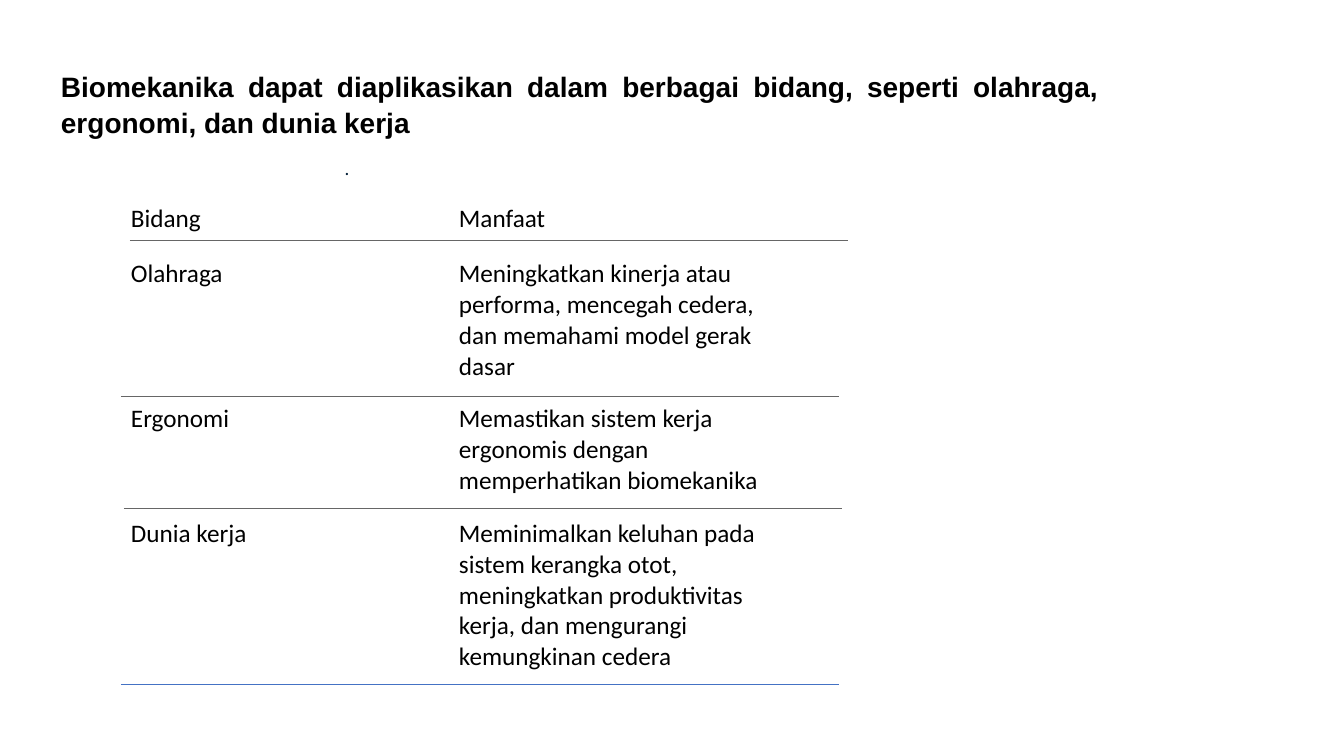
from lxml import etree
from pptx import Presentation
from pptx.dml.color import RGBColor
from pptx.enum.shapes import MSO_CONNECTOR, MSO_SHAPE
from pptx.enum.text import MSO_ANCHOR, PP_ALIGN
from pptx.oxml.ns import qn
from pptx.util import Emu, Pt

LEFT, JUSTIFY = PP_ALIGN.LEFT, PP_ALIGN.JUSTIFY
TOP = MSO_ANCHOR.TOP
RECT = MSO_SHAPE.RECTANGLE
STRAIGHT = MSO_CONNECTOR.STRAIGHT

BLACK = RGBColor(0x00, 0x00, 0x00)
WHITE = RGBColor(0xFF, 0xFF, 0xFF)
NAVY = RGBColor(0x00, 0x1D, 0x35)
GREY = RGBColor(0x66, 0x66, 0x66)
BLUE = RGBColor(0x44, 0x72, 0xC4)

SCALE = 9071
RULE_WIDTH = 718

TITLE = ("Biomekanika dapat diaplikasikan dalam berbagai bidang, "
         "seperti olahraga, ergonomi, dan dunia kerja")
ROWS = [
    (48, "Bidang", "Manfaat"),
    (144, "Olahraga", "Meningkatkan kinerja atau performa, mencegah cedera, "
                      "dan memahami model gerak dasar"),
    (114, "Ergonomi", "Memastikan sistem kerja ergonomis dengan "
                      "memperhatikan biomekanika"),
    (174, "Dunia kerja", "Meminimalkan keluhan pada sistem kerangka otot, "
                         "meningkatkan produktivitas kerja, dan mengurangi "
                         "kemungkinan cedera"),
]
RULES = [(130, 240, GREY), (121, 396, GREY), (124, 508, GREY), (121, 684, BLUE)]


def px(count):
    return Emu(count * SCALE)


def box(*sides):
    return [px(side) for side in sides]


def write(frame, text, size=18, face="Calibri", color=BLACK, bold=False,
          align=LEFT, spacing=None):
    frame.word_wrap = True
    para = frame.paragraphs[0]
    para.alignment = align
    para.line_spacing = spacing
    run = para.add_run()
    run.text = text
    font = run.font
    font.size, font.name, font.bold = Pt(size), face, bold
    font.color.rgb = color


def add_title(slide):
    frame = slide.shapes.add_textbox(*box(51, 62, 1058, 83)).text_frame
    write(frame, TITLE, size=20, face="Arial", bold=True, align=JUSTIFY,
          spacing=1.07)


def add_grid(slide):
    height = sum(row[0] for row in ROWS)
    grid = slide.shapes.add_table(len(ROWS), 2, *box(121, 199, 656, height)).table
    grid.first_row = grid.horz_banding = False
    for col in grid.columns:
        col.width = px(328)
    for r, (tall, *texts) in enumerate(ROWS):
        grid.rows[r].height = px(tall)
        for c, text in enumerate(texts):
            cell = grid.cell(r, c)
            cell.fill.background()
            cell.margin_left = cell.margin_right = px(10)
            cell.margin_top = px(12 if r else 5)
            cell.margin_bottom = px(12)
            write(cell.text_frame, text)


def add_dot(slide):
    shape = slide.shapes.add_shape(RECT, *box(345, 157, 9, 83))
    shape.shadow.inherit = False
    shape.fill.solid()
    shape.fill.fore_color.rgb = WHITE
    shape.line.fill.background()
    frame = shape.text_frame
    frame.vertical_anchor = TOP
    frame.margin_left = frame.margin_right = frame.margin_top = 0
    write(frame, ".", size=13, face="Lato", color=NAVY)


def add_rule(slide, left, top, color):
    rule = slide.shapes.add_connector(
        STRAIGHT, *box(left, top, left + RULE_WIDTH, top))
    rule.line.color.rgb = color
    rule.line.width = Pt(0.5)
    etree.SubElement(rule._element.spPr, qn("a:effectLst"))


def main():
    deck = Presentation()
    deck.slide_width, deck.slide_height = box(1344, 756)
    slide = deck.slides.add_slide(deck.slide_layouts[6])
    add_title(slide)
    add_grid(slide)
    add_dot(slide)
    for rule in RULES:
        add_rule(slide, *rule)
    deck.save("out.pptx")


if __name__ == "__main__":
    main()
